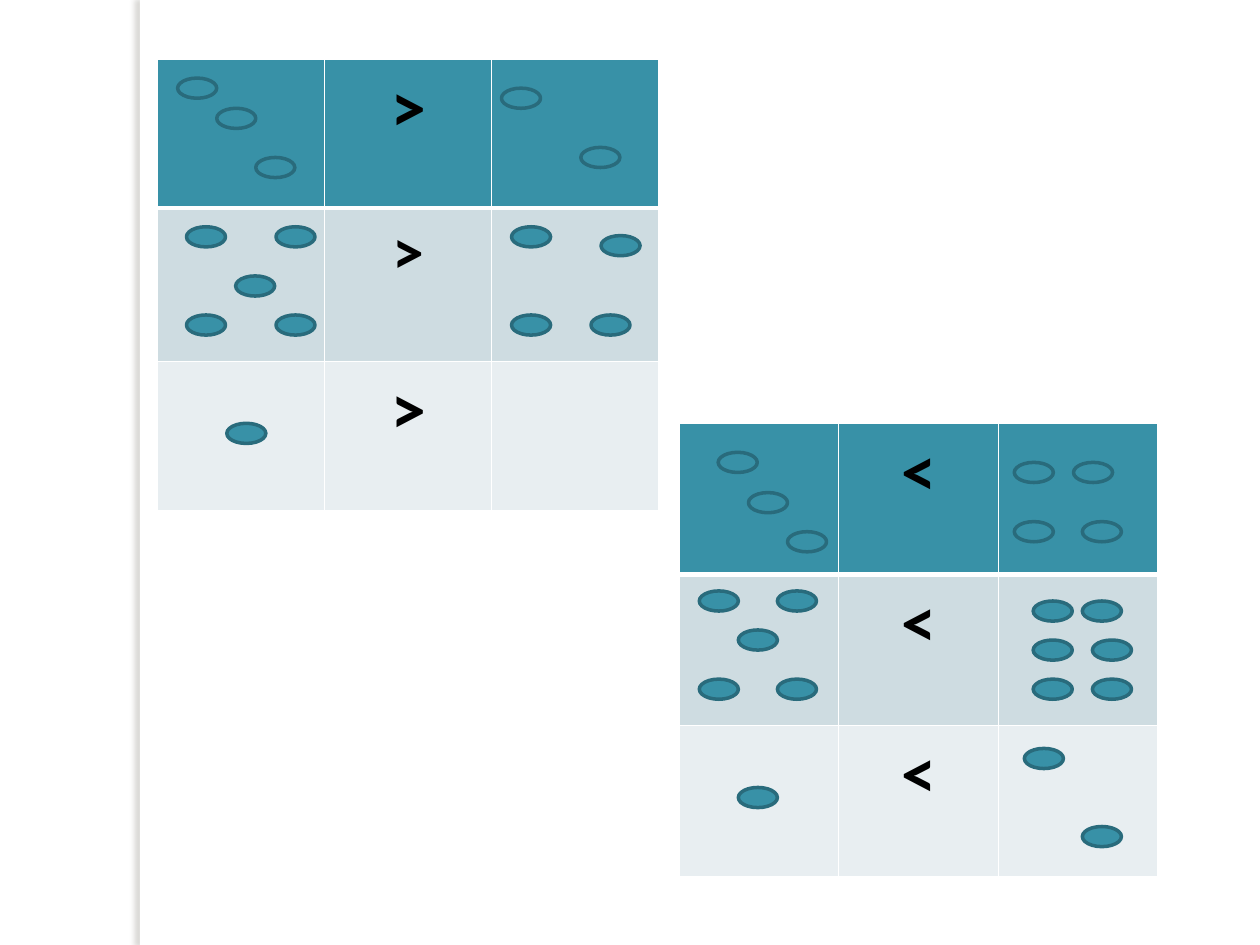
"""Build a slide of two comparison tables with counting ovals."""
from lxml.etree import SubElement
from pptx import Presentation
from pptx.dml.color import RGBColor
from pptx.enum.shapes import MSO_SHAPE as Shape
from pptx.enum.text import PP_ALIGN as Align
from pptx.oxml import parse_xml
from pptx.oxml.ns import nsdecls, qn
from pptx.util import Inches, Pt

WHITE = RGBColor(0xFF, 0xFF, 0xFF)
BLACK = RGBColor(0, 0, 0)
TEAL = RGBColor(0x38, 0x91, 0xA7)
DARK_TEAL = RGBColor(0x29, 0x6B, 0x7C)
ROW_FILLS = [TEAL, RGBColor(0xCE, 0xDC, 0xE1), RGBColor(0xE8, 0xEE, 0xF1)]

TABLES = [
    (">", 1.25, 0.47, 3.98, [1.18, 1.22, 1.18], [40, 36, 40]),
    ("<", 5.39, 3.36, 3.8, [1.2, 1.2, 1.2], [40, 40, 40]),
]
OVALS = [
    (1.41, 0.62), (1.72, 0.86), (2.03, 1.25),
    (3.98, 0.7), (4.61, 1.17),
    (1.48, 1.8), (2.19, 1.8), (1.87, 2.19), (1.48, 2.5), (2.19, 2.5),
    (4.06, 1.8), (4.77, 1.87), (4.06, 2.5), (4.69, 2.5),
    (1.8, 3.36),
    (5.7, 3.59), (5.94, 3.91), (6.25, 4.22),
    (8.05, 3.67), (8.52, 3.67), (8.05, 4.14), (8.59, 4.14),
    (5.55, 4.69), (6.17, 4.69), (5.86, 5), (5.55, 5.39), (6.17, 5.39),
    (8.2, 4.77), (8.59, 4.77), (8.2, 5.08), (8.67, 5.08), (8.2, 5.39), (8.67, 5.39),
    (5.86, 6.25),
    (8.13, 5.94), (8.59, 6.56),
]


def add_border(cell, side, points):
    line = SubElement(cell._tc.get_or_add_tcPr(), qn(f"a:ln{side}"), w=str(Pt(points)))
    fill = SubElement(line, qn("a:solidFill"))
    SubElement(fill, qn("a:srgbClr"), val=str(WHITE))


deck = Presentation()
deck.slide_width, deck.slide_height = Inches(10), Inches(7.5)
page = deck.slides.add_slide(deck.slide_layouts[6])

bar = page.shapes.add_shape(Shape.RECTANGLE, Inches(1.11), 0, Inches(0.08), Inches(7.5))
bar.fill.solid()
bar.fill.fore_color.rgb = WHITE
bar.line.fill.background()
bar._element.spPr.append(parse_xml(
    f'<a:effectLst {nsdecls("a")}><a:outerShdw blurRad="{Pt(3)}" dist="{Pt(3)}" '
    'dir="10800000" algn="tl" rotWithShape="0"><a:srgbClr val="736F63">'
    '<a:alpha val="25000"/></a:srgbClr></a:outerShdw></a:effectLst>'))

for sign, left, top, width, heights, sizes in TABLES:
    frame = page.shapes.add_table(
        3, 3, Inches(left), Inches(top), Inches(width), Inches(sum(heights)))
    table = frame.table
    table.first_row = table.horz_banding = False
    for column in table.columns:
        column.width = Inches(width / 3)
    for index, row in enumerate(table.rows):
        row.height = Inches(heights[index])
        for cell in row.cells:
            for side in "LRTB":
                under_header = (index, side) in [(0, "B"), (1, "T")]
                add_border(cell, side, 3 if under_header else 1)
            cell.fill.solid()
            cell.fill.fore_color.rgb = ROW_FILLS[index]
        para = table.cell(index, 1).text_frame.paragraphs[0]
        para.alignment = Align.CENTER
        span = para.add_run()
        span.text = sign
        span.font.name = "Calibri"
        span.font.size = Pt(sizes[index])
        span.font.bold = True
        span.font.color.rgb = BLACK

for left, top in OVALS:
    oval = page.shapes.add_shape(
        Shape.OVAL, Inches(left), Inches(top), Inches(0.31), Inches(0.16))
    oval.shadow.inherit = False
    oval.fill.solid()
    oval.fill.fore_color.rgb = TEAL
    oval.line.color.rgb = DARK_TEAL
    oval.line.width = Pt(2)

deck.save("out.pptx")
